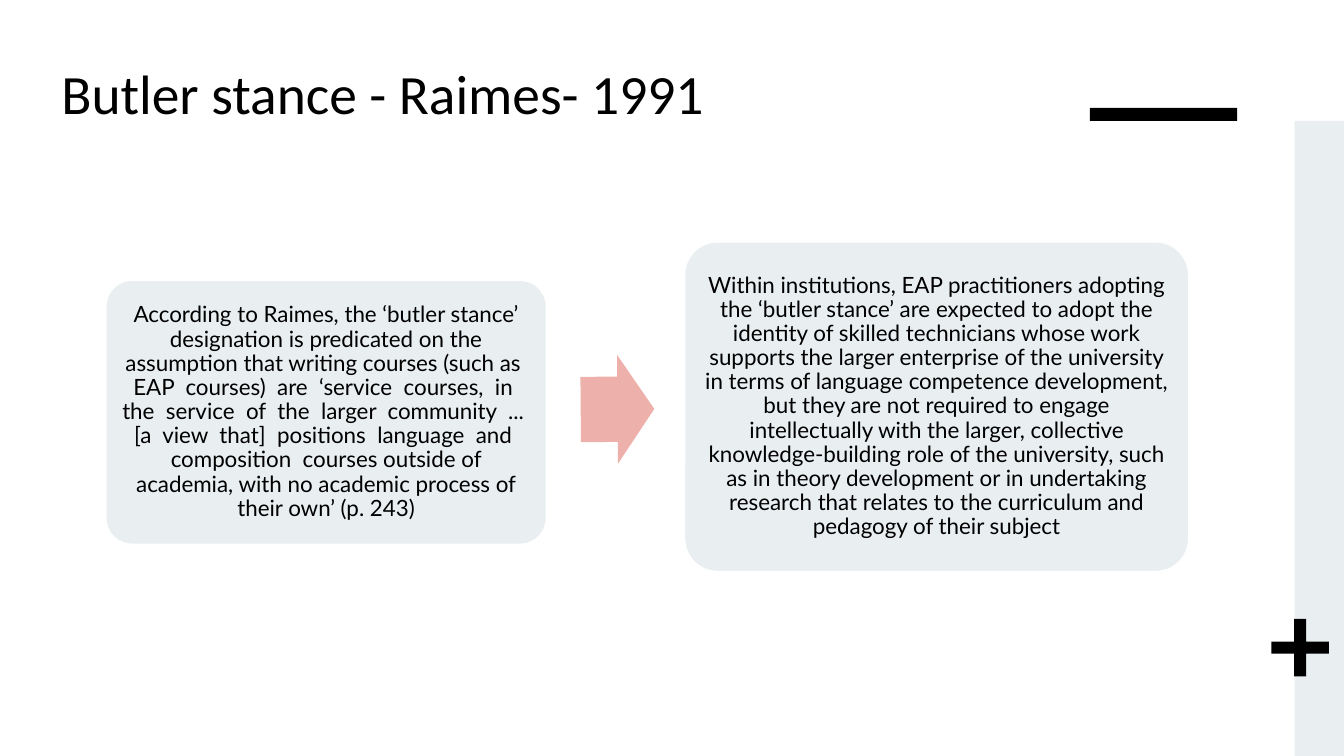
from dataclasses import dataclass

from pptx import Presentation
from pptx.dml.color import RGBColor
from pptx.enum.shapes import MSO_SHAPE
from pptx.enum.text import MSO_ANCHOR, PP_ALIGN
from pptx.shapes.autoshape import Shape
from pptx.slide import Slide
from pptx.util import Inches, Pt

RECTANGLE = MSO_SHAPE.RECTANGLE
PLUS = MSO_SHAPE.CROSS
ROUNDED = MSO_SHAPE.ROUNDED_RECTANGLE
ARROW = MSO_SHAPE.RIGHT_ARROW
MIDDLE = MSO_ANCHOR.MIDDLE
LEFT, CENTER = PP_ALIGN.LEFT, PP_ALIGN.CENTER


@dataclass(frozen=True)
class Theme:
    ink: str = "000000"
    panel: str = "E9EFF1"
    accent: str = "EEB0AB"
    outline: str = "FFFFFF"
    title_font: str = "Calibri"
    body_font: str = "Lato"
    title_size: float = 39.6
    body_size: float = 16


THEME = Theme()


@dataclass(frozen=True)
class Block:
    kind: MSO_SHAPE
    left: float
    top: float
    width: float
    height: float
    color: str
    adjustments: tuple[float, ...] = ()
    rotation: float = 0
    text: str = ""


BLOCKS = (
    # Side band, title accent and plus sign
    Block(RECTANGLE, 12.84, 1.2, 0.5, 6.3, THEME.panel),
    Block(RECTANGLE, 10.81, 1.07, 1.46, 0.13, THEME.ink),
    Block(PLUS, 12.61, 6.14, 0.57, 0.57, THEME.ink, (0.395,)),
    # Two statements joined by an arrow
    Block(
        ROUNDED, 1.05, 2.78, 4.37, 2.62, THEME.panel, (0.1,),
        text="According to Raimes, the ‘butler stance’ designation is predicated on "
        "the assumption that writing courses (such as  EAP  courses)  are  ‘service  "
        "courses,  in  the  service  of  the  larger  community  ...  [a  view  that]  "
        "positions  language  and  composition  courses outside of academia, with no "
        "academic process of their own’ (p. 243)",
    ),
    Block(ARROW, 5.76, 3.52, 0.73, 1.08, THEME.accent, (0.6, 0.5), rotation=359.5),
    Block(
        ROUNDED, 6.79, 2.4, 5, 3.27, THEME.panel, (0.1,),
        text="Within institutions, EAP practitioners adopting the ‘butler stance’ are "
        "expected to adopt the identity of skilled technicians whose work supports the "
        "larger enterprise of the university in terms of language competence "
        "development, but they are not required to engage intellectually with the "
        "larger, collective knowledge-building role of the university, such as in "
        "theory development or in undertaking research that relates to the curriculum "
        "and pedagogy of their subject",
    ),
)


def write_text(shape: Shape, text: str, font: str, size: float,
               alignment: PP_ALIGN, spacing: float, inset: float) -> None:
    """Fill a shape with one formatted paragraph."""
    frame = shape.text_frame
    margin = Inches(inset)
    frame_format = {
        "word_wrap": True, "vertical_anchor": MIDDLE,
        "margin_left": margin, "margin_right": margin,
        "margin_top": margin, "margin_bottom": margin,
    }
    for name, value in frame_format.items():
        setattr(frame, name, value)
    paragraph = frame.paragraphs[0]
    paragraph.alignment = alignment
    paragraph.line_spacing = spacing
    run = paragraph.add_run()
    run.text = text
    for name, value in {"name": font, "size": Pt(size)}.items():
        setattr(run.font, name, value)
    run.font.color.rgb = RGBColor.from_string(THEME.ink)


def add_block(slide: Slide, block: Block) -> None:
    """Draw a filled shape, with its text if it has any."""
    shape = slide.shapes.add_shape(
        block.kind, Inches(block.left), Inches(block.top),
        Inches(block.width), Inches(block.height))
    shape.shadow.inherit = False
    shape.rotation = block.rotation
    for index, value in enumerate(block.adjustments):
        shape.adjustments[index] = value
    shape.fill.solid()
    shape.fill.fore_color.rgb = RGBColor.from_string(block.color)
    if block.text:
        shape.line.color.rgb = RGBColor.from_string(THEME.outline)
        shape.line.width = Pt(1)
        write_text(shape, block.text, THEME.body_font, THEME.body_size,
                   CENTER, 0.9, 0.07)
    else:
        shape.line.fill.background()


def add_title(slide: Slide, text: str) -> None:
    """Place the slide heading."""
    title = slide.shapes.add_textbox(
        Inches(0.61), Inches(0.41), Inches(10), Inches(1.02))
    write_text(title, text, THEME.title_font, THEME.title_size, LEFT, 1.0, 0)


def main() -> None:
    presentation = Presentation()
    presentation.slide_width = Inches(13.33)
    presentation.slide_height = Inches(7.5)
    slide = presentation.slides.add_slide(presentation.slide_layouts[6])
    for block in BLOCKS:
        add_block(slide, block)
    add_title(slide, "Butler stance - Raimes- 1991")
    presentation.save("out.pptx")


if __name__ == "__main__":
    main()
